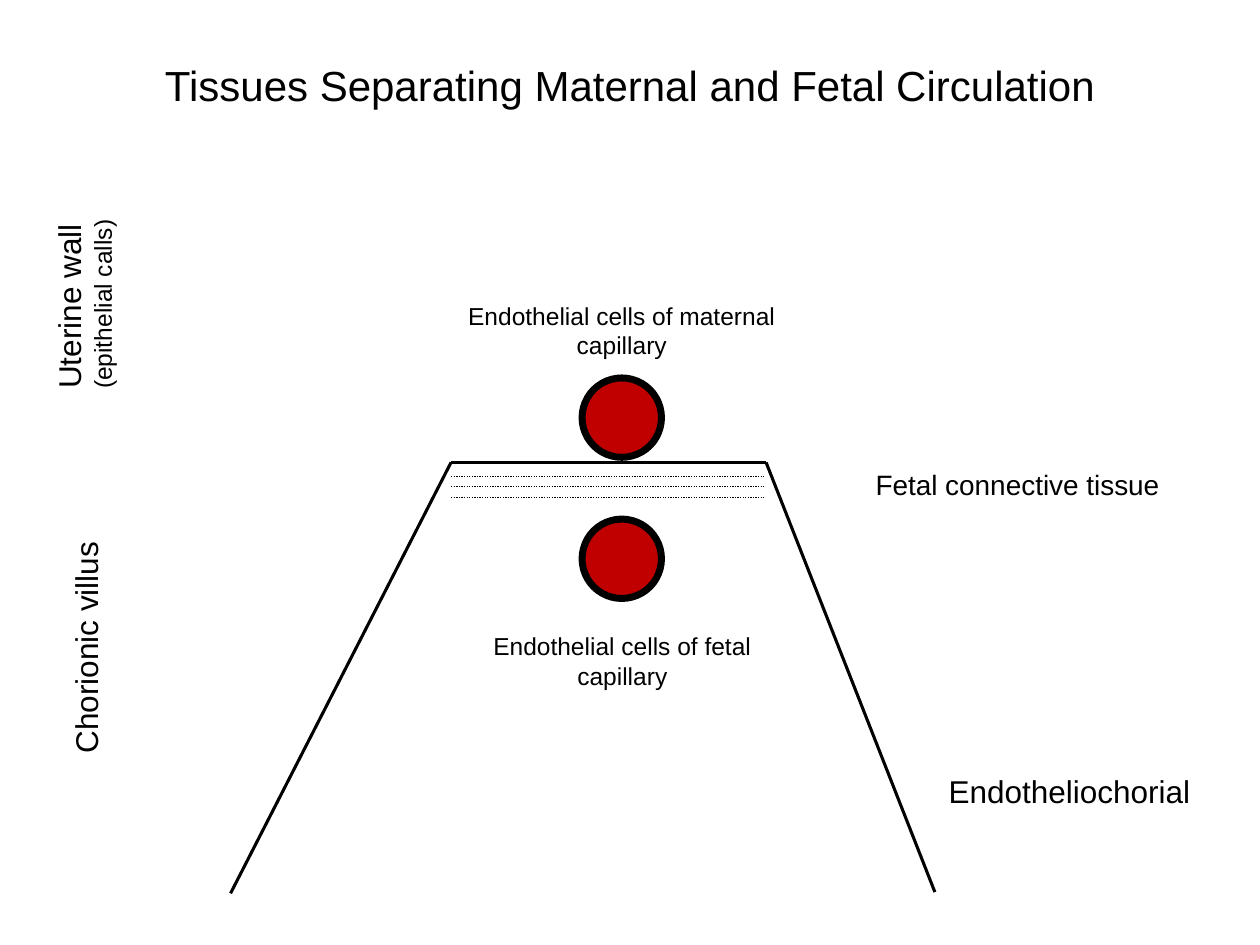
from pptx import Presentation
from pptx.dml.color import RGBColor
from pptx.enum.dml import MSO_LINE
from pptx.enum.shapes import MSO_CONNECTOR, MSO_SHAPE
from pptx.enum.text import MSO_AUTO_SIZE, PP_ALIGN
from pptx.oxml.ns import qn
from pptx.util import Inches, Pt
from lxml.etree import SubElement

BLACK = RGBColor(0x00, 0x00, 0x00)
RED = RGBColor(0xC0, 0x00, 0x00)


class Diagram:
    font = "Arial"
    ink = BLACK

    def __init__(self, slide):
        self.slide = slide

    def label(self, x, y, w, h, *lines, align=PP_ALIGN.LEFT, rotation=0):
        """Add a text box; each line is a (text, size) pair."""
        sp = self.slide.shapes.add_textbox(Inches(x), Inches(y), Inches(w), Inches(h))
        sp.rotation = rotation
        tf = sp.text_frame
        tf.word_wrap = False
        tf.auto_size = MSO_AUTO_SIZE.SHAPE_TO_FIT_TEXT
        tf.text = "\n".join(text for text, _ in lines)
        for p, (_, size) in zip(tf.paragraphs, lines):
            p.alignment = align
            for r in p.runs:
                r.font.name = self.font
                r.font.size = Pt(size)
                r.font.color.rgb = self.ink

    def line(self, x1, y1, x2, y2, width=1.75, dash=None):
        sp = self.slide.shapes.add_connector(
            MSO_CONNECTOR.STRAIGHT, Inches(x1), Inches(y1), Inches(x2), Inches(y2))
        sp.line.color.rgb = self.ink
        sp.line.width = Pt(width)
        if dash:
            sp.line.dash_style = dash
        SubElement(sp._element.spPr, qn("a:effectLst"))

    def capillary(self, x, y, size=0.63):
        sp = self.slide.shapes.add_shape(
            MSO_SHAPE.OVAL, Inches(x), Inches(y), Inches(size), Inches(size))
        sp.shadow.inherit = False
        sp.fill.solid()
        sp.fill.fore_color.rgb = RED
        sp.line.color.rgb = self.ink
        sp.line.width = Pt(4)


def main():
    prs = Presentation()
    prs.slide_width, prs.slide_height = Inches(10), Inches(7.5)
    d = Diagram(prs.slides.add_slide(prs.slide_layouts[6]))

    d.label(1.17, 0.42, 7.66, 0.5,
            ("Tissues Separating Maternal and Fetal Circulation", 24),
            align=PP_ALIGN.CENTER)

    for y in (3, 4.12):
        d.capillary(4.62, y)

    villus = [(1.83, 7.09), (3.58, 3.67), (6.08, 3.67), (7.42, 7.08)]
    for start, end in zip(villus, villus[1:]):
        d.line(*start, *end)

    d.label(-0.27, 4.93, 1.9, 0.4, ("Chorionic villus", 18), rotation=270)
    d.label(-0.11, 2.09, 1.55, 0.64, ("Uterine wall", 18),
            ("(epithelial calls)", 14), rotation=270)

    for x, y, w, origin in ((3.81, 4.96, 2.26, "fetal"), (3.61, 2.34, 2.65, "maternal")):
        d.label(x, y, w, 0.57, (f"Endothelial cells of {origin}", 14),
                ("capillary", 14), align=PP_ALIGN.CENTER)

    for y in (3.78, 3.86, 3.95):
        d.line(3.58, y, 6.07, y, width=0.75, dash=MSO_LINE.ROUND_DOT)

    d.label(6.85, 3.66, 2.48, 0.37, ("Fetal connective tissue", 16))
    d.label(7.43, 6.08, 2.14, 0.4, ("Endotheliochorial", 18))

    prs.save("out.pptx")


if __name__ == "__main__":
    main()
